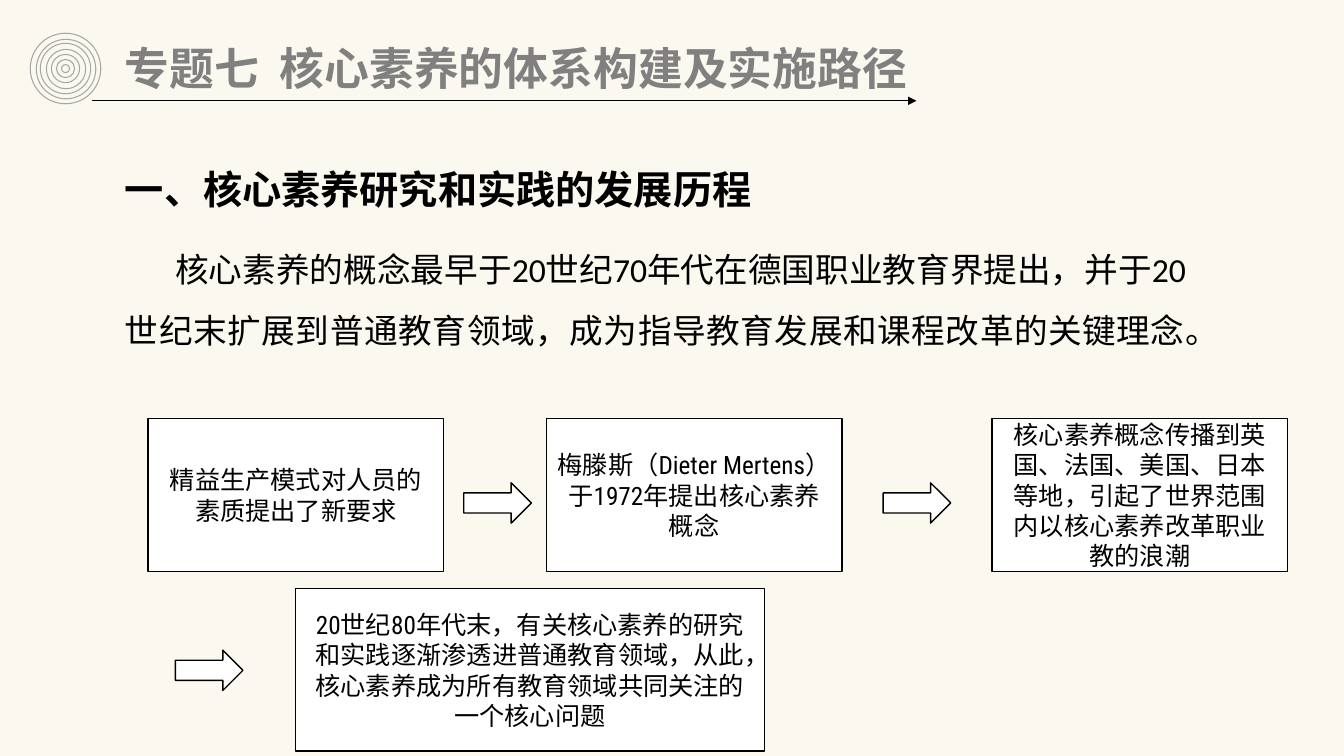
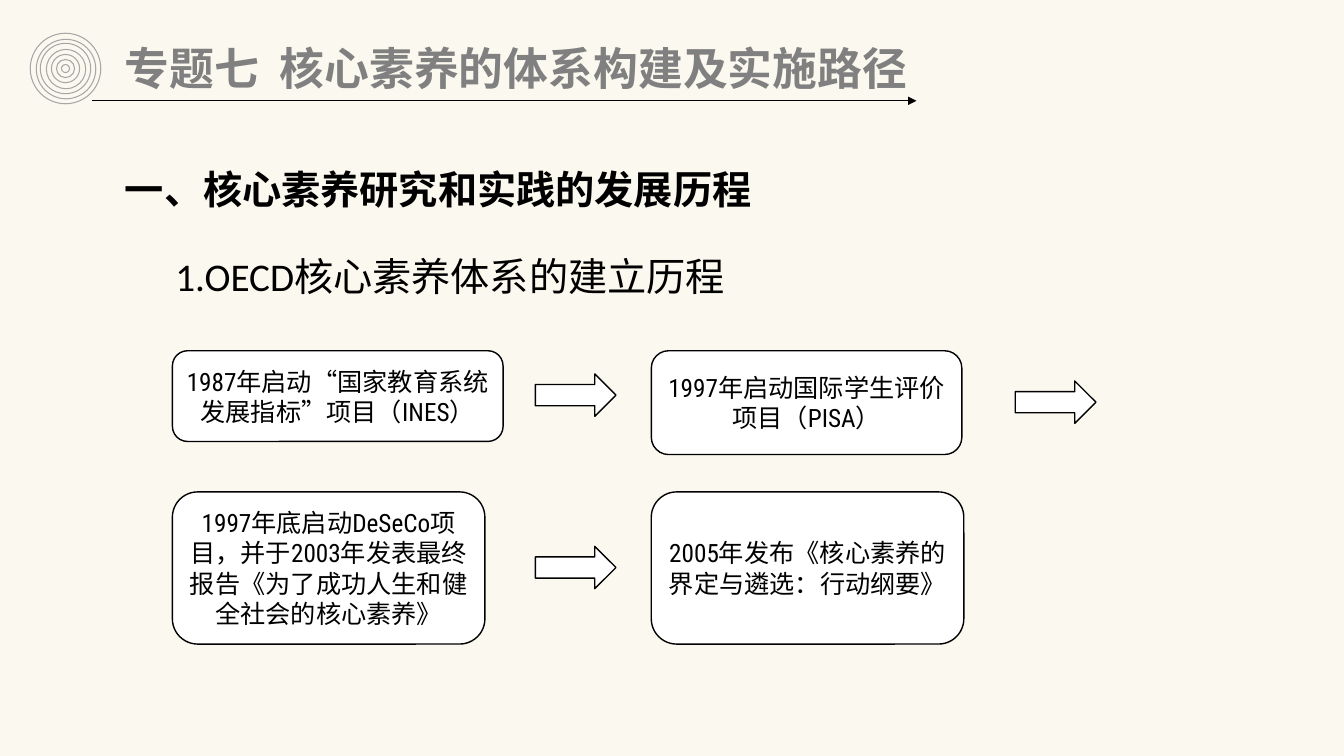
from lxml.etree import SubElement
from pptx import Presentation
from pptx.dml.color import RGBColor
from pptx.enum.shapes import MSO_CONNECTOR, MSO_SHAPE
from pptx.enum.text import MSO_ANCHOR, PP_ALIGN
from pptx.oxml.ns import qn
from pptx.util import Pt

EMU_PER_PX = 9144  # 100 px to the inch
SLIDE_SIZE = (1333, 750)

CREAM = RGBColor(0xFB, 0xF8, 0xEF)
WHITE = RGBColor(0xFF, 0xFF, 0xFF)
BLACK = RGBColor(0x00, 0x00, 0x00)
GRAY = RGBColor(0x80, 0x80, 0x80)
LIGHT_GRAY = RGBColor(0xA6, 0xA6, 0xA6)

HEADING_FONT = "Roboto Condensed"
BODY_FONT = "Calibri"
TITLE = "专题七  核心素养的体系构建及实施路径"
HEADING = "一、核心素养研究和实践的发展历程"
RING_CENTER = (65, 68)
RING_DIAMETERS = (70, 59, 50, 39, 28, 18, 8)

JUSTIFIED = {"alignment": PP_ALIGN.JUSTIFY, "space_after": Pt(12)}
HEADING_FORMAT = {**JUSTIFIED, "line_spacing": 1.3}
BODY_FORMAT = {**JUSTIFIED, "line_spacing": 1.5}
CENTERED = {"alignment": PP_ALIGN.CENTER}


def emu(px):
    return round(px * EMU_PER_PX)


def apply_format(target, values):
    for name, value in values.items():
        setattr(target, name, value)


class Deck:
    """Holds the shared style and the slide being drawn."""

    def __init__(self):
        self.presentation = Presentation()
        self.presentation.slide_width, self.presentation.slide_height = map(emu, SLIDE_SIZE)
        self.slide = None

    def add_slide(self, body, body_size, body_height):
        self.slide = self.presentation.slides.add_slide(self.presentation.slide_layouts[6])
        fill = self.slide.background.fill
        fill.solid()
        fill.fore_color.rgb = CREAM
        self.rings()
        frame = self.text_box(114, 36, 824, 64)
        self.add_text(frame.paragraphs[0], TITLE, 32, color=GRAY, bold=True)
        frame = self.text_box(114, 145, 1072, body_height)
        self.add_text(frame.paragraphs[0], HEADING, 28, bold=True, layout=HEADING_FORMAT)
        paragraph = frame.add_paragraph()
        self.add_text(paragraph, body, body_size, font=BODY_FONT, layout=BODY_FORMAT)
        paragraph._p.get_or_add_pPr().set("indent", str(emu(50)))
        self.title_arrow()

    def add_text(self, paragraph, text, size, font=HEADING_FONT, color=BLACK, bold=False,
                 layout=None):
        apply_format(paragraph, layout or {})
        run = paragraph.add_run()
        run.text = text
        apply_format(run.font, {"name": font, "size": Pt(size), "bold": bold})
        run.font.color.rgb = color

    def text_box(self, *place):
        frame = self.slide.shapes.add_textbox(*map(emu, place)).text_frame
        frame.word_wrap = True
        return frame

    def shape(self, kind, place, fill=WHITE, line=BLACK, weight=1, parent=None):
        shape = (parent or self.slide).shapes.add_shape(kind, *map(emu, place))
        shape.shadow.inherit = False
        shape.fill.solid()
        shape.fill.fore_color.rgb = fill
        shape.line.color.rgb = line
        shape.line.width = Pt(weight)
        return shape

    def rings(self):
        group = self.slide.shapes.add_group_shape()
        for diameter in RING_DIAMETERS:
            left, top = (center - diameter // 2 for center in RING_CENTER)
            self.shape(MSO_SHAPE.OVAL, (left, top, diameter, diameter), CREAM, LIGHT_GRAY, 0, group)

    def title_arrow(self):
        arrow = self.slide.shapes.add_connector(
            MSO_CONNECTOR.STRAIGHT, *map(emu, (91, 100, 909, 100)))
        arrow.line.color.rgb = BLACK
        arrow.line.width = Pt(0.5)
        SubElement(arrow.line._get_or_add_ln(), qn("a:tailEnd"), type="triangle")
        SubElement(arrow._element.spPr, qn("a:effectLst"))

    def box(self, kind, place, text):
        frame = self.shape(kind, place).text_frame
        apply_format(frame, {"word_wrap": True, "vertical_anchor": MSO_ANCHOR.MIDDLE})
        self.add_text(frame.paragraphs[0], text, 18, layout=CENTERED)

    def block_arrows(self, size, corners):
        for corner in corners:
            self.shape(MSO_SHAPE.RIGHT_ARROW, (*corner, *size))


def origins_slide(deck):
    deck.add_slide(
        "核心素养的概念最早于20世纪70年代在德国职业教育界提出，并于20世纪末扩展到普通教育领域，"
        "成为指导教育发展和课程改革的关键理念。", 24, 272)
    steps = (
        (147, "精益生产模式对人员的素质提出了新要求"),
        (542, "梅滕斯（Dieter Mertens）于1972年提出核心素养概念"),
        (984, "核心素养概念传播到英国、法国、美国、日本等地，"
              "引起了世界范围内以核心素养改革职业教的浪潮"),
    )
    for left, text in steps:
        deck.box(MSO_SHAPE.RECTANGLE, (left, 415, 293, 152), text)
    deck.box(
        MSO_SHAPE.RECTANGLE, (293, 584, 465, 161),
        "20世纪80年代末，有关核心素养的研究和实践逐渐渗透进普通教育领域，"
        "从此，核心素养成为所有教育领域共同关注的一个核心问题")
    deck.block_arrows((67, 40), ((460, 479), (876, 479), (174, 645)))


def oecd_slide(deck):
    deck.add_slide("1.OECD核心素养体系的建立历程", 28, 236)
    milestones = (
        ((171, 348, 328, 90), "1987年启动“国家教育系统发展指标”项目（INES）"),
        ((646, 348, 308, 103), "1997年启动国际学生评价项目（PISA）"),
        ((171, 488, 310, 151),
         "1997年底启动DeSeCo项目，并于2003年发表最终报告《为了成功人生和健全社会的核心素养》"),
        ((646, 488, 310, 151), "2005年发布《核心素养的界定与遴选：行动纲要》"),
    )
    for place, text in milestones:
        deck.box(MSO_SHAPE.ROUNDED_RECTANGLE, place, text)
    deck.block_arrows((80, 42), ((531, 371), (1007, 378), (531, 542)))


def main():
    deck = Deck()
    origins_slide(deck)
    oecd_slide(deck)
    deck.presentation.save("out.pptx")


if __name__ == "__main__":
    main()
